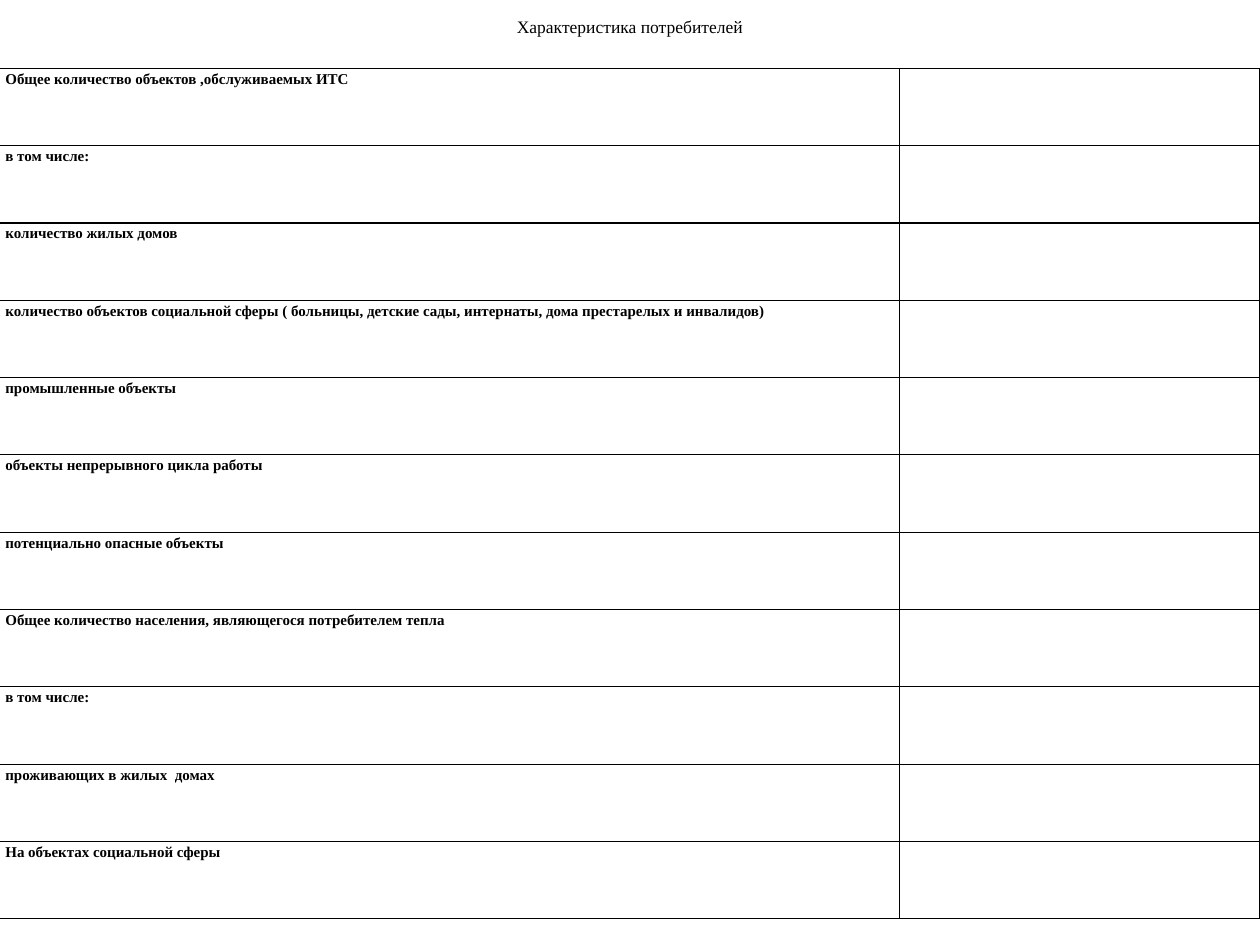
import pptx
import pptx.dml.color
import pptx.enum.text
import pptx.oxml
import pptx.oxml.ns
import pptx.util
from pptx.util import Inches

COLORS = {"text": "000000", "border": "000000"}
FONT = "Times New Roman"
LABELS = [
    "Общее количество объектов ,обслуживаемых ИТС",
    "в том числе:",
    "количество жилых домов",
    "количество объектов социальной сферы ( больницы, детские сады, интернаты, "
    "дома престарелых и инвалидов)",
    "промышленные объекты",
    "объекты непрерывного цикла работы",
    "потенциально опасные объекты",
    "Общее количество населения, являющегося потребителем тепла",
    "в том числе:",
    "проживающих в жилых  домах",
    "На объектах социальной сферы",
]


def write(tf, text, size, bold=False):
    """Set the text of a frame and return its paragraph."""
    p = tf.paragraphs[0]
    p.text = text
    for r in p.runs:
        r.font.name = FONT
        r.font.size = pptx.util.Pt(size)
        r.font.bold = bold
        r.font.color.rgb = pptx.dml.color.RGBColor.from_string(COLORS["text"])
    return p


def add_title(s, text):
    tf = s.shapes.add_textbox(0, 0, Inches(14), Inches(0.6)).text_frame
    tf.word_wrap = True
    tf.vertical_anchor = pptx.enum.text.MSO_ANCHOR.MIDDLE
    write(tf, text, 14).alignment = pptx.enum.text.PP_ALIGN.CENTER


def add_borders(cell, width):
    tc_pr = cell._tc.get_or_add_tcPr()
    for side in ("lnL", "lnR", "lnT", "lnB"):
        tc_pr.append(pptx.oxml.parse_xml(
            f'<a:{side} {pptx.oxml.ns.nsdecls("a")} w="{pptx.util.Pt(width)}">'
            f'<a:solidFill><a:srgbClr val="{COLORS["border"]}"/></a:solidFill>'
            f'</a:{side}>'))


def add_consumer_table(s):
    height = Inches(9.45)
    table = s.shapes.add_table(len(LABELS), 2, Inches(-0.01), Inches(0.76),
                               Inches(14.01), height).table
    table.first_row = table.horz_banding = False
    table.columns[0].width = Inches(10)
    table.columns[1].width = Inches(4.01)
    for row, label in zip(table.rows, LABELS):
        row.height = height // len(LABELS)
        for cell in row.cells:
            add_borders(cell, 1)
            cell.fill.background()
        cell = row.cells[0]
        cell.margin_left = cell.margin_right = Inches(0.07)
        cell.margin_top = cell.margin_bottom = 0
        write(cell.text_frame, label, 12, bold=True).line_spacing = 1.15


def main():
    prs = pptx.Presentation()
    prs.slide_width, prs.slide_height = Inches(14), Inches(10.5)
    s = prs.slides.add_slide(prs.slide_layouts[6])
    add_title(s, "Характеристика потребителей")
    add_consumer_table(s)
    prs.save("out.pptx")


if __name__ == "__main__":
    main()
